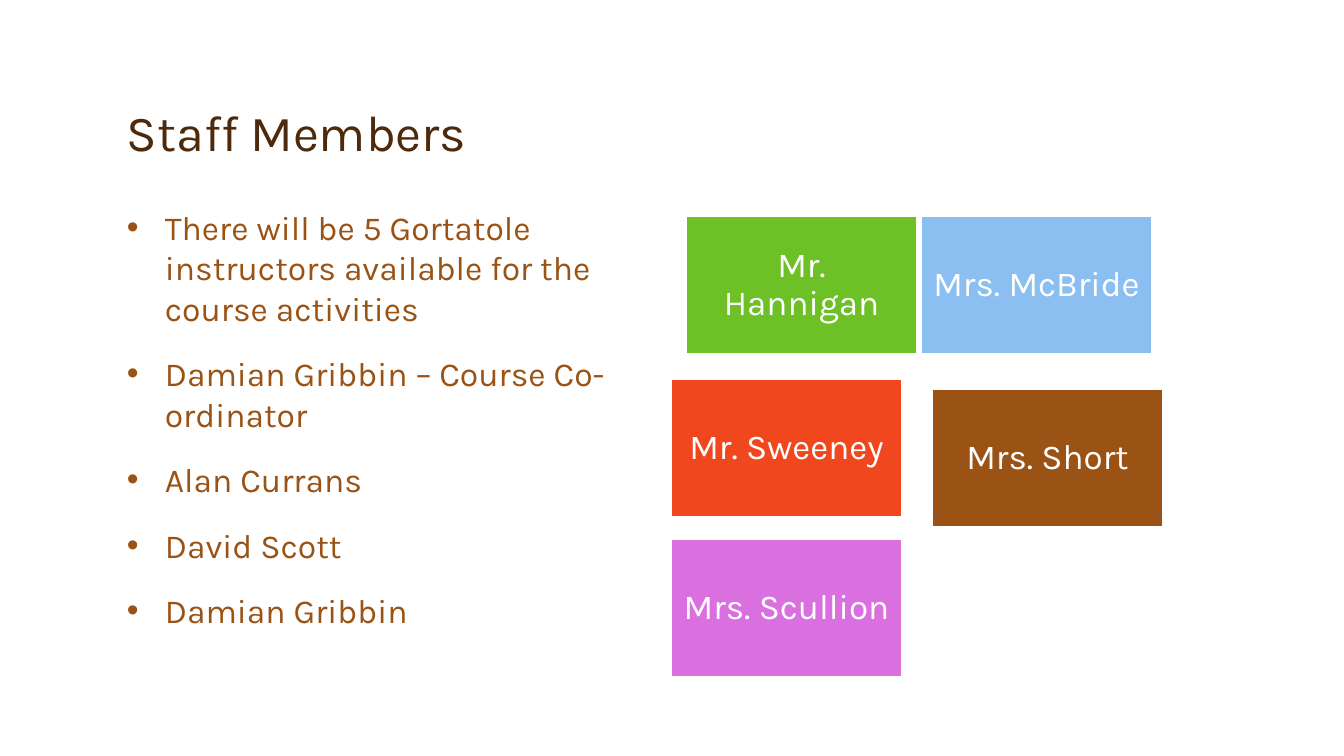
from lxml import etree
from pptx import Presentation
from pptx.dml.color import RGBColor
from pptx.enum.shapes import MSO_SHAPE
from pptx.enum.text import MSO_ANCHOR, PP_ALIGN
from pptx.oxml.ns import qn
from pptx.util import Emu, Pt

RECTANGLE = MSO_SHAPE.RECTANGLE
TOP, MIDDLE, BOTTOM = MSO_ANCHOR.TOP, MSO_ANCHOR.MIDDLE, MSO_ANCHOR.BOTTOM
LEFT, CENTER = PP_ALIGN.LEFT, PP_ALIGN.CENTER

WHITE = RGBColor(0xFF, 0xFF, 0xFF)
DARK_BROWN = RGBColor(0x4D, 0x2A, 0x0B)
BROWN = RGBColor(0x9A, 0x53, 0x15)
BLUE = RGBColor(0x8B, 0xBE, 0xF1)
GREEN = RGBColor(0x6D, 0xC0, 0x25)
RED = RGBColor(0xF1, 0x47, 0x1F)
VIOLET = RGBColor(0xDA, 0x6F, 0xDF)

PX_PER_INCH = 100.8
SLIDE_SIZE = (1344, 756)
TILE_SIZE = (231, 138)
TILE_INSET = 11
BULLET_INDENT = 38

INSTRUCTORS = [
    "There will be 5 Gortatole instructors available for the course activities",
    "Damian Gribbin – Course Co-ordinator",
    "Alan Currans",
    "David Scott",
    "Damian Gribbin",
]
TEACHERS = [
    ("Mrs. McBride", 921, 216, BLUE),
    ("Mr. Hannigan", 686, 216, GREEN),
    ("Mrs. Short", 932, 389, BROWN),
    ("Mr. Sweeney", 671, 379, RED),
    ("Mrs. Scullion", 671, 539, VIOLET),
]


def px(length):
    return Emu(round(length * 914400 / PX_PER_INCH))


class StaffSlide:
    font_name = "Karla"

    def __init__(self, presentation):
        self.slide = presentation.slides.add_slide(presentation.slide_layouts[6])

    def add_text(self, paragraph, text, size, color, align=LEFT, spacing=1.0):
        paragraph.alignment = align
        paragraph.line_spacing = spacing
        run = paragraph.add_run()
        run.text = text
        run.font.name = self.font_name
        run.font.size = Pt(size)
        run.font.color.rgb = color

    def text_frame(self, box, anchor):
        frame = self.slide.shapes.add_textbox(*map(px, box)).text_frame
        frame.word_wrap = True
        frame.vertical_anchor = anchor
        return frame

    def title(self, text, box):
        heading = self.text_frame(box, BOTTOM).paragraphs[0]
        self.add_text(heading, text, 36, DARK_BROWN, spacing=0.9)

    def bullets(self, items, box):
        frame = self.text_frame(box, TOP)
        for index, item in enumerate(items):
            paragraph = frame.add_paragraph() if index else frame.paragraphs[0]
            properties = paragraph._p.get_or_add_pPr()
            properties.set("marL", str(px(BULLET_INDENT)))
            properties.set("indent", str(-px(BULLET_INDENT)))
            etree.SubElement(properties, qn("a:buFont"), typeface="Arial")
            etree.SubElement(properties, qn("a:buChar"), char="•")
            paragraph.space_before = Pt(18 if index else 0)
            self.add_text(paragraph, item, 24, BROWN)

    def tile(self, name, left, top, color):
        card = self.slide.shapes.add_shape(RECTANGLE, *map(px, (left, top, *TILE_SIZE)))
        card.shadow.inherit = False
        card.fill.solid()
        card.fill.fore_color.rgb = color
        card.line.color.rgb = WHITE
        card.line.width = Pt(1)
        frame = card.text_frame
        frame.word_wrap = True
        frame.vertical_anchor = MIDDLE
        frame.margin_left = frame.margin_right = px(TILE_INSET)
        frame.margin_top = frame.margin_bottom = px(TILE_INSET)
        self.add_text(frame.paragraphs[0], name, 25, WHITE, CENTER, 0.9)


def main():
    presentation = Presentation()
    presentation.slide_width, presentation.slide_height = map(px, SLIDE_SIZE)
    staff = StaffSlide(presentation)
    staff.title("Staff Members", (117, 33, 1109, 134))
    staff.bullets(INSTRUCTORS, (117, 202, 546, 462))
    for teacher in TEACHERS:
        staff.tile(*teacher)
    presentation.save("out.pptx")


if __name__ == "__main__":
    main()
